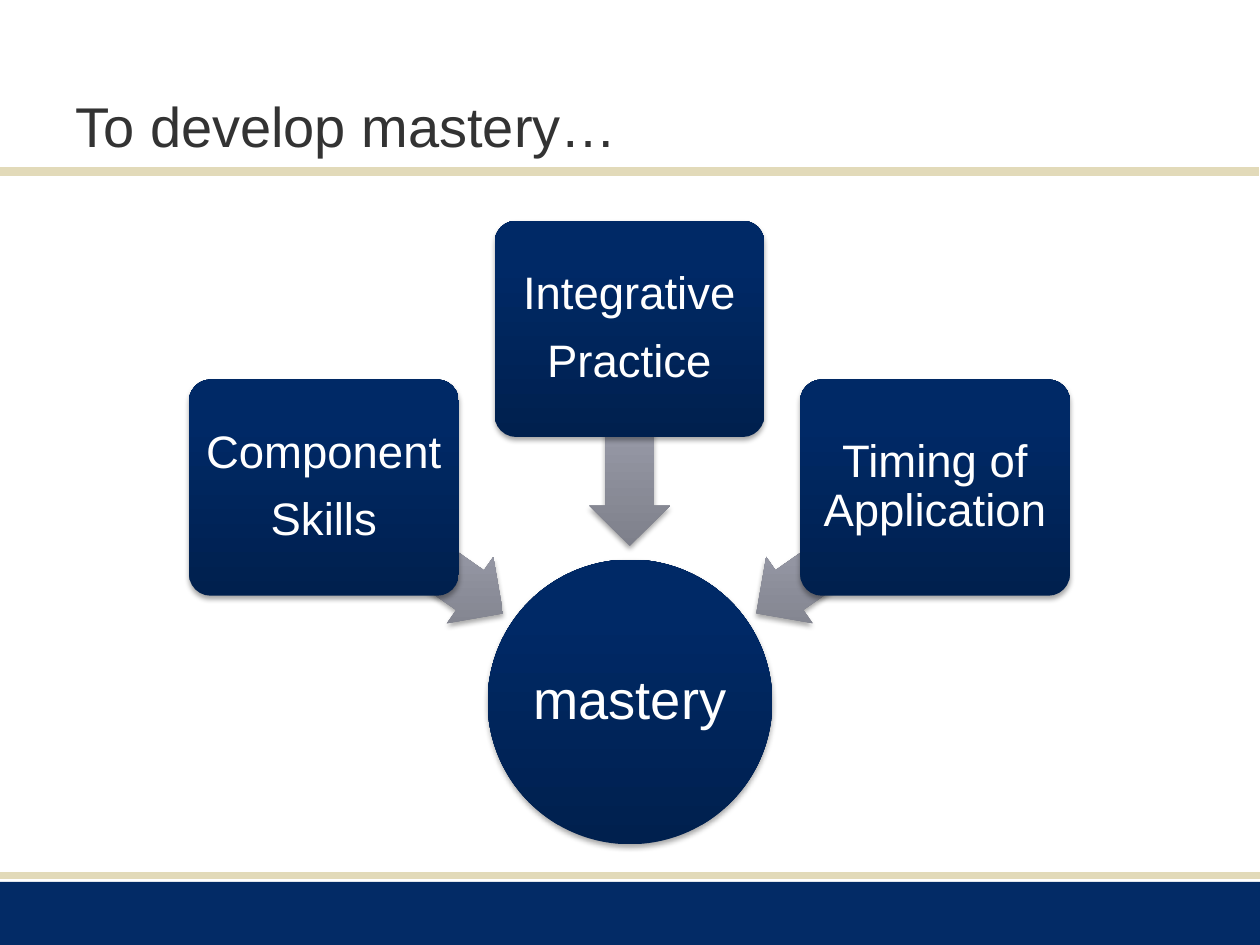
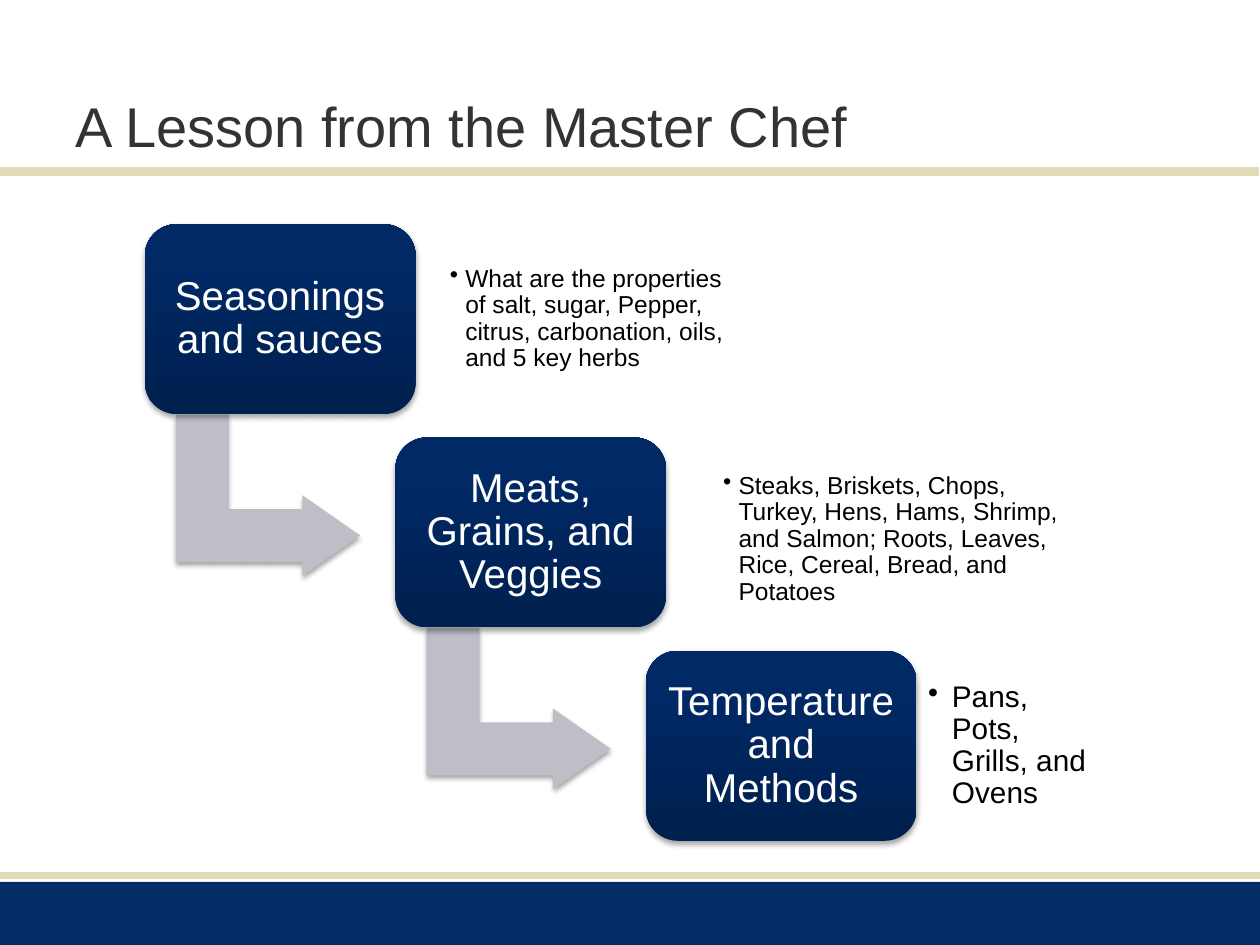
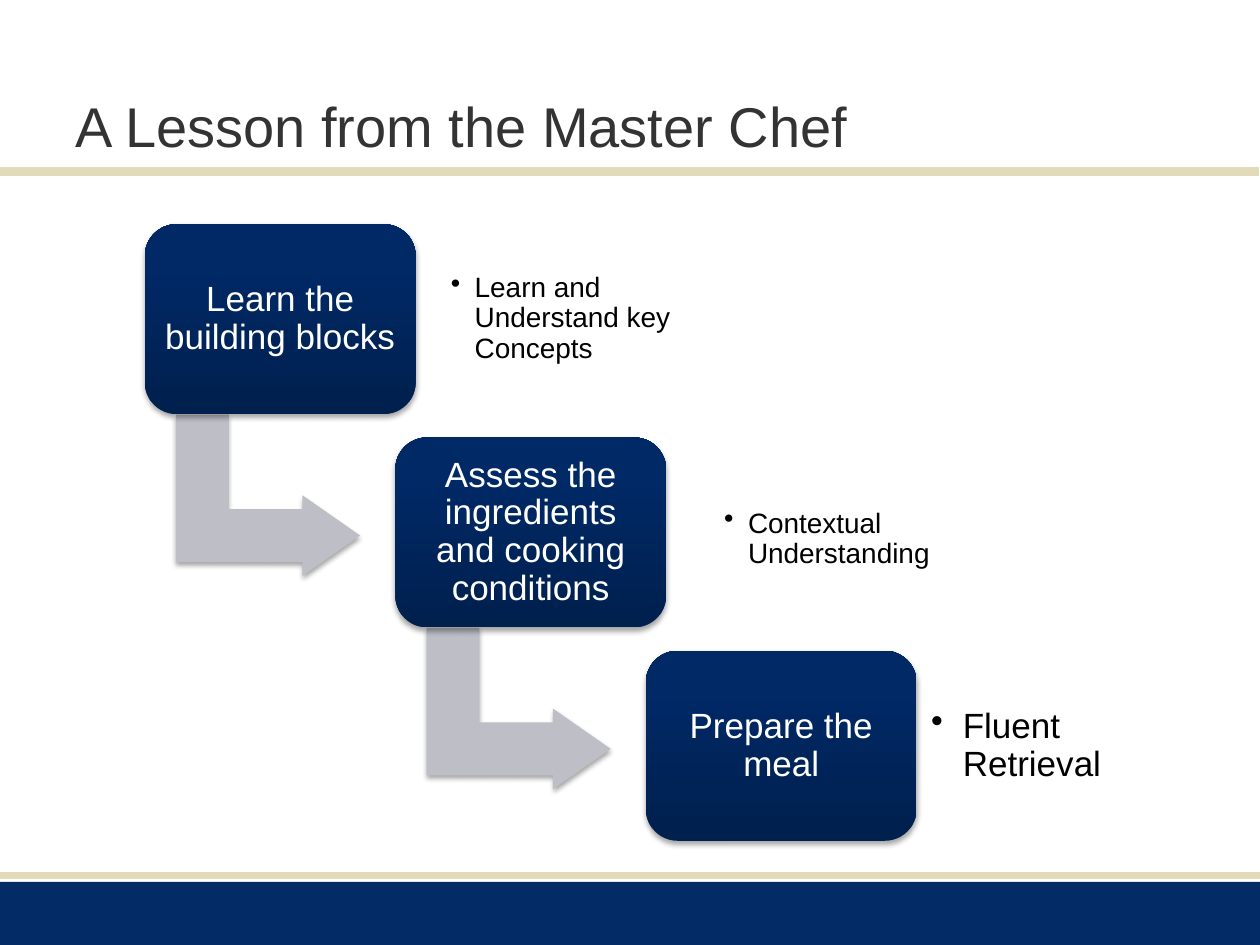
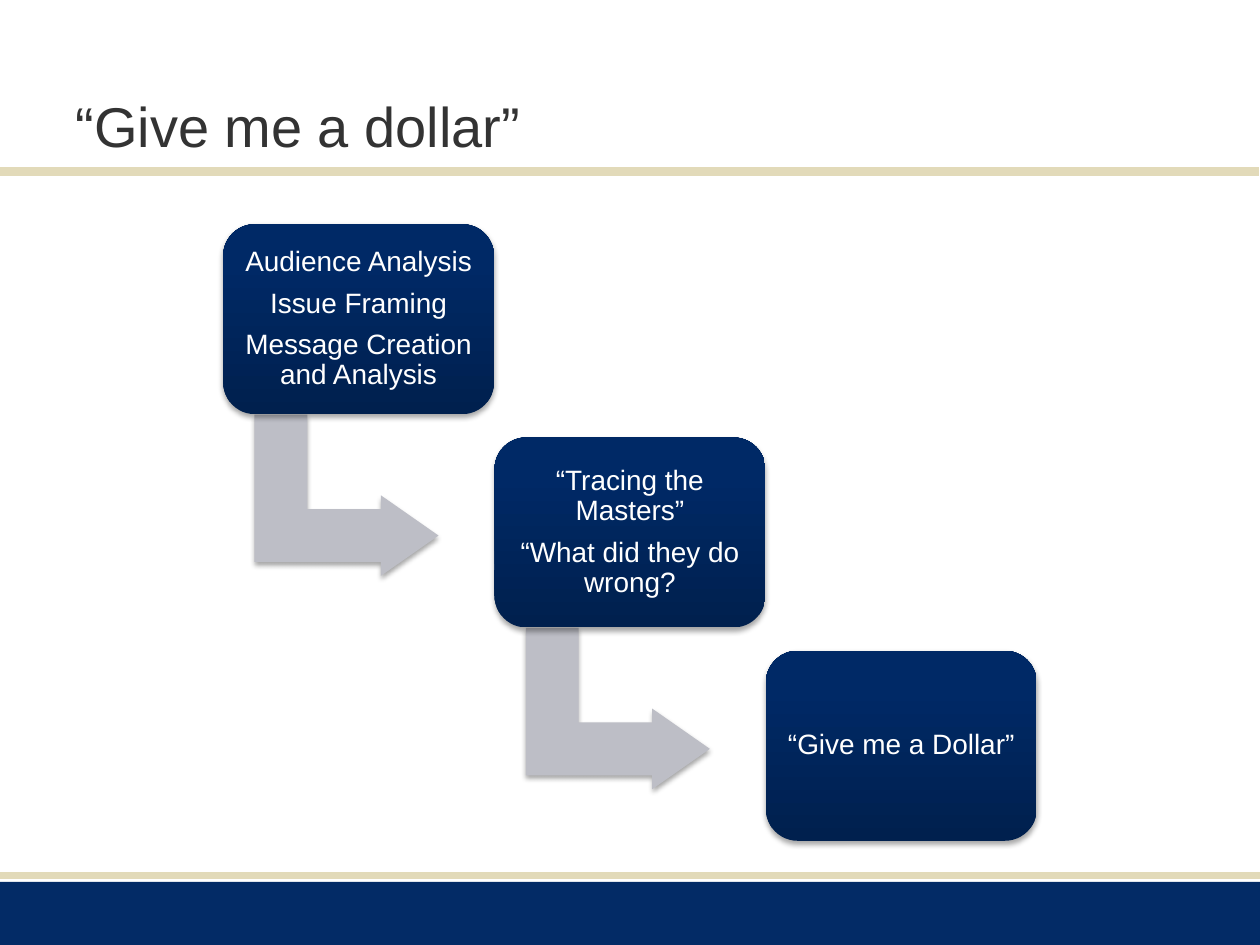
from dataclasses import dataclass

from lxml.etree import SubElement
from pptx import Presentation
from pptx.dml.color import RGBColor as Rgb
from pptx.enum.shapes import MSO_CONNECTOR as Connector, MSO_SHAPE as Shape
from pptx.enum.text import MSO_ANCHOR as Anchor, PP_ALIGN as Align
from pptx.oxml.ns import qn
from pptx.util import Cm, Pt


@dataclass(frozen=True)
class Theme:
    font: str = "Arial"
    title_size: int = 32
    goal_size: int = 31
    skill_size: int = 26
    title: str = "333333"
    body: str = "000000"
    on_dark: str = "FFFFFF"
    band: str = "032B66"
    rule: str = "E2DAB9"
    navy: tuple = ("00204E", "002966")
    grey: tuple = ("7E808B", "A4A6B4")
    step_arrow: tuple = ("BDBEC6",)


THEME = Theme()


def paint(shape, colours):
    """Fill with one colour or a bottom-to-top gradient, and add a soft shadow."""
    shape.line.fill.background()
    properties = shape._element.spPr
    if len(colours) == 1:
        shape.fill.solid()
        shape.fill.fore_color.rgb = Rgb.from_string(colours[0])
    else:
        shape.fill.gradient()
        shape.fill.gradient_angle = 90
        for stop, colour, position in zip(shape.fill.gradient_stops, colours, (0, 0.8)):
            stop.color.rgb = Rgb.from_string(colour)
            stop.position = position
        properties.find(qn("a:gradFill")).set("rotWithShape", "0")
    shape.shadow.inherit = False
    shadow = SubElement(properties.find(qn("a:effectLst")), qn("a:outerShdw"),
                        blurRad="39370", dist="22860", dir="5400000", rotWithShape="0")
    black = SubElement(shadow, qn("a:srgbClr"), val="000000")
    SubElement(black, qn("a:alpha"), val="35000")


def write(box, lines, size, colour, inset, align=Align.CENTER, after=0.4, bullet_indent=None):
    """Write one paragraph per line, centred vertically in the box."""
    frame = box.text_frame
    frame.word_wrap = True
    frame.vertical_anchor = Anchor.MIDDLE
    frame.margin_left = frame.margin_right = Cm(inset)
    frame.margin_top = frame.margin_bottom = Cm(inset)
    for index, line in enumerate(lines):
        para = frame.paragraphs[0] if index == 0 else frame.add_paragraph()
        para.alignment = align
        para.line_spacing = 0.9
        para.space_after = Pt(size * after)
        if bullet_indent:
            settings = para._p.get_or_add_pPr()
            settings.set("marL", str(Cm(bullet_indent)))
            settings.set("indent", str(-Cm(bullet_indent)))
            SubElement(settings, qn("a:buChar"), char="•")
        span = para.add_run()
        span.text = line
        span.font.name = THEME.font
        span.font.size = Pt(size)
        span.font.color.rgb = Rgb.from_string(colour)


deck = Presentation()
deck.slide_width, deck.slide_height = Cm(25.4), Cm(19.05)

# Shared frame: bottom band, two rules and a title
titles = ["To develop mastery…", "A Lesson from the Master Chef",
          "A Lesson from the Master Chef", "“Give me a dollar”"]
pages = []
for title in titles:
    page = deck.slides.add_slide(deck.slide_layouts[6])
    pages.append(page)
    band = page.shapes.add_shape(Shape.RECTANGLE, 0, Cm(17.78), Cm(25.4), Cm(1.27))
    band.shadow.inherit = False
    band.fill.solid()
    band.fill.fore_color.rgb = Rgb.from_string(THEME.band)
    band.line.fill.background()
    for left, top, weight in [(0, 17.65, 4), (-0.03, 3.45, 5)]:
        rule = page.shapes.add_connector(Connector.STRAIGHT, Cm(left), Cm(top),
                                         Cm(left + 25.4), Cm(top))
        rule.line.color.rgb = Rgb.from_string(THEME.rule)
        rule.line.width = Pt(weight)
        SubElement(rule._element.spPr, qn("a:effectLst"))
    heading = page.shapes.add_textbox(Cm(1.27), Cm(0.15), Cm(22.86), Cm(3.18))
    heading.text_frame.word_wrap = True
    heading.text_frame.vertical_anchor = Anchor.BOTTOM
    span = heading.text_frame.paragraphs[0].add_run()
    span.text = title
    span.font.name = THEME.font
    span.font.size = Pt(THEME.title_size)
    span.font.color.rgb = Rgb.from_string(THEME.title)

# Slide 1: three skills pointing to mastery
page = pages[0]
goal = page.shapes.add_shape(Shape.OVAL, Cm(9.83), Cm(11.28), Cm(5.74), Cm(5.74))
paint(goal, THEME.navy)
write(goal, ["mastery"], THEME.goal_size, THEME.on_dark, 0.05)

skills = [
    (["Component", "Skills"], 7.65, 10.29, 215),
    (["Integrative", "Practice"], 4.45, 8, 270),
    (["Timing of Application"], 7.65, 10.29, 325),
]
for column, (lines, box_top, arrow_top, rotation) in enumerate(skills):
    arrow = page.shapes.add_shape(Shape.LEFT_ARROW, Cm(6.15 + 4.35 * column), Cm(arrow_top),
                                  Cm(4.39), Cm(1.63))
    arrow.adjustments[0], arrow.adjustments[1] = 0.6, 0.5
    arrow.rotation = rotation
    paint(arrow, THEME.grey)
    box = page.shapes.add_shape(Shape.ROUNDED_RECTANGLE, Cm(3.81 + 6.16 * column), Cm(box_top),
                                Cm(5.44), Cm(4.36))
    box.adjustments[0] = 0.1
    paint(box, THEME.navy)
    write(box, lines, THEME.skill_size, THEME.on_dark, 0.12)

# Slides 2 to 4: staircases of (step lines, note, note size, note inset, note indent)
staircases = [
    (2.92, 5.05, 23, 0.24, [
        (["Seasonings and sauces"],
         "What are the properties of salt, sugar, Pepper, citrus, carbonation, oils, "
         "and 5 key herbs", 14, 0.18, 0.31),
        (["Meats, Grains, and Veggies"],
         "Steaks, Briskets, Chops, Turkey, Hens, Hams, Shrimp, and Salmon; Roots, Leaves, "
         "Rice, Cereal, Bread, and Potatoes", 14, 0.18, 0.31),
        (["Temperature and Methods"], "Pans, Pots, Grills, and Ovens", 17, 0.22, 0.48),
    ]),
    (2.92, 5.05, 20, 0.19, [
        (["Learn the building blocks"], "Learn and Understand key Concepts", 16, 0.2, 0.48),
        (["Assess the ingredients and cooking conditions"],
         "Contextual Understanding", 16, 0.2, 0.48),
        (["Prepare the meal"], "Fluent Retrieval", 20, 0.28, 0.64),
    ]),
    (4.5, 5.47, 16, 0.17, [
        (["Audience Analysis", "Issue Framing", "Message Creation and Analysis"],
         None, 0, 0, 0),
        (["“Tracing the Masters”", "“What did they do wrong?"], None, 0, 0, 0),
        (["“Give me a Dollar”"], None, 0, 0, 0),
    ]),
]
note_places = [(8.89, 4.88, 6.15), (14.4, 9.32, 7.24), (18.49, 13.49, 3.99)]

for page, (start, pitch, size, inset, steps) in zip(pages[1:], staircases):
    for index, (lines, note, note_size, note_inset, indent) in enumerate(steps):
        left, top = start + pitch * index, 4.52 + 4.3 * index
        # Arrow down to the next step
        if index < len(steps) - 1:
            arrow = page.shapes.add_shape(Shape.BENT_UP_ARROW, Cm(left + 0.86), Cm(top + 3.61),
                                          Cm(3.25), Cm(3.71))
            for slot, value in enumerate((0.328, 0.25, 0.358)):
                arrow.adjustments[slot] = value
            arrow.rotation = 90
            paint(arrow, THEME.step_arrow)
        # Step box
        box = page.shapes.add_shape(Shape.ROUNDED_RECTANGLE, Cm(left), Cm(top),
                                    Cm(5.46), Cm(3.83))
        box.adjustments[0] = 0.167
        paint(box, THEME.navy)
        write(box, lines, size, THEME.on_dark, inset)
        # Bulleted note beside the step
        if note:
            note_left, note_top, note_width = note_places[index]
            note_box = page.shapes.add_textbox(Cm(note_left), Cm(note_top),
                                               Cm(note_width), Cm(3.1))
            write(note_box, [note], note_size, THEME.body, note_inset,
                  align=Align.LEFT, after=0.17, bullet_indent=indent)

deck.save("out.pptx")
